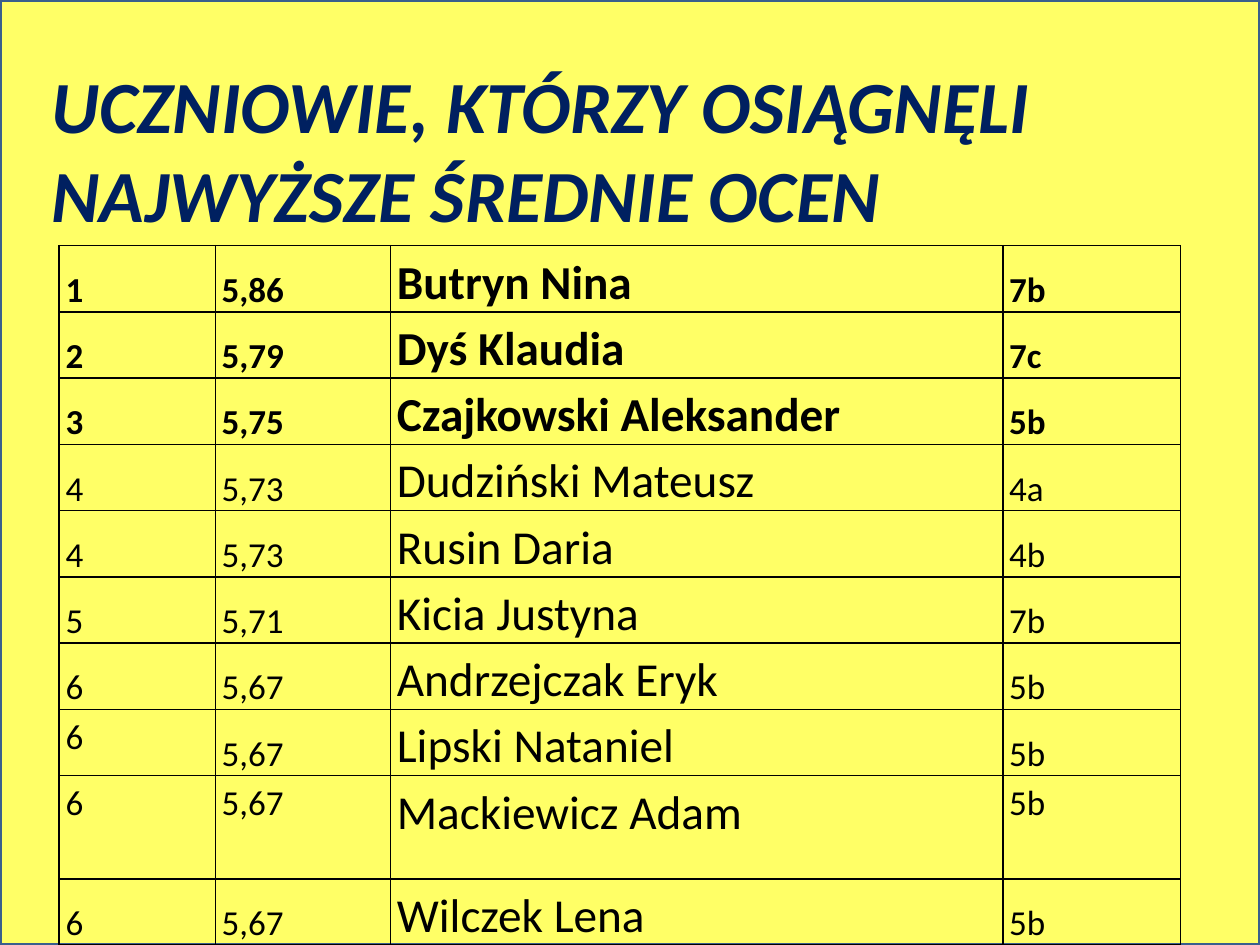
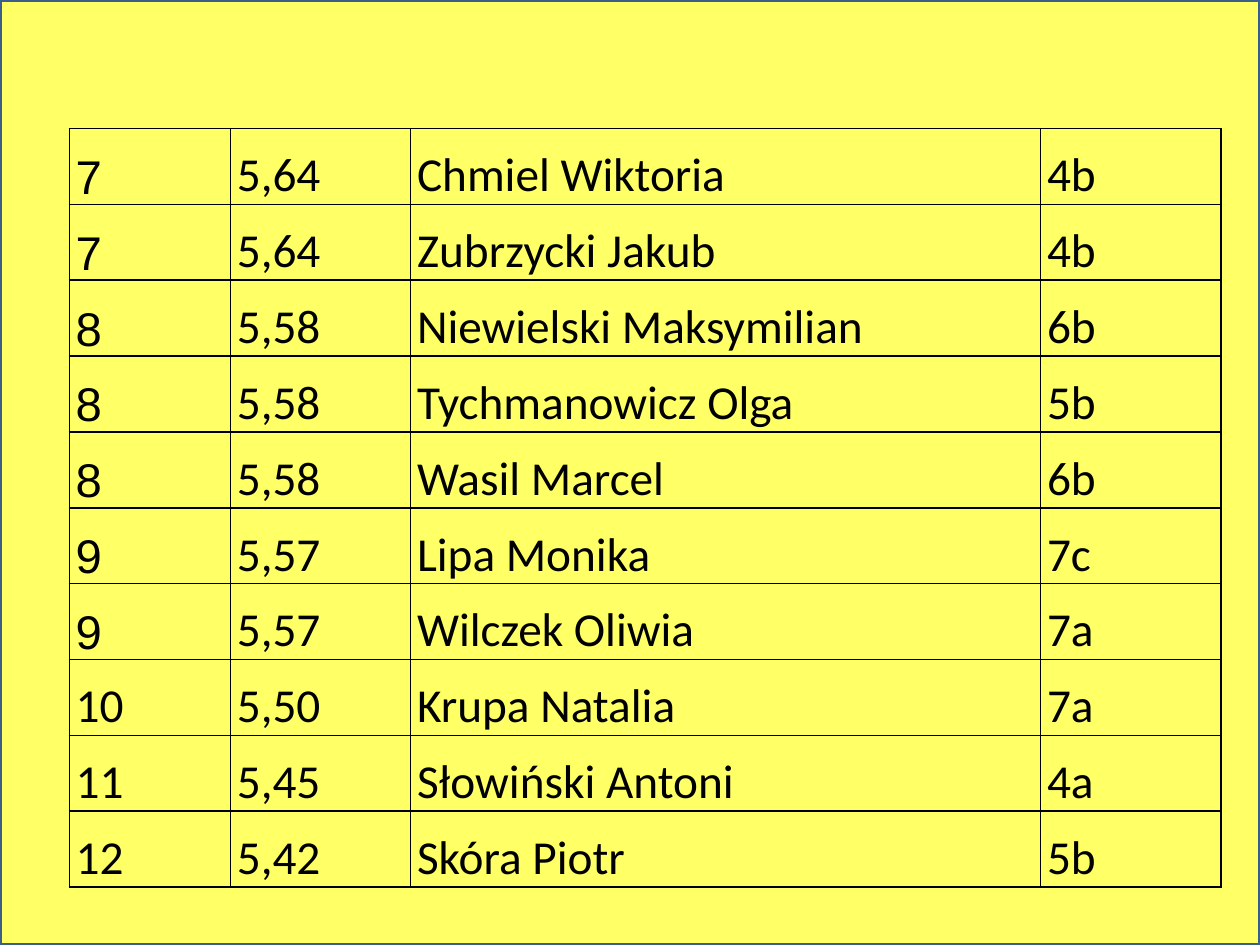
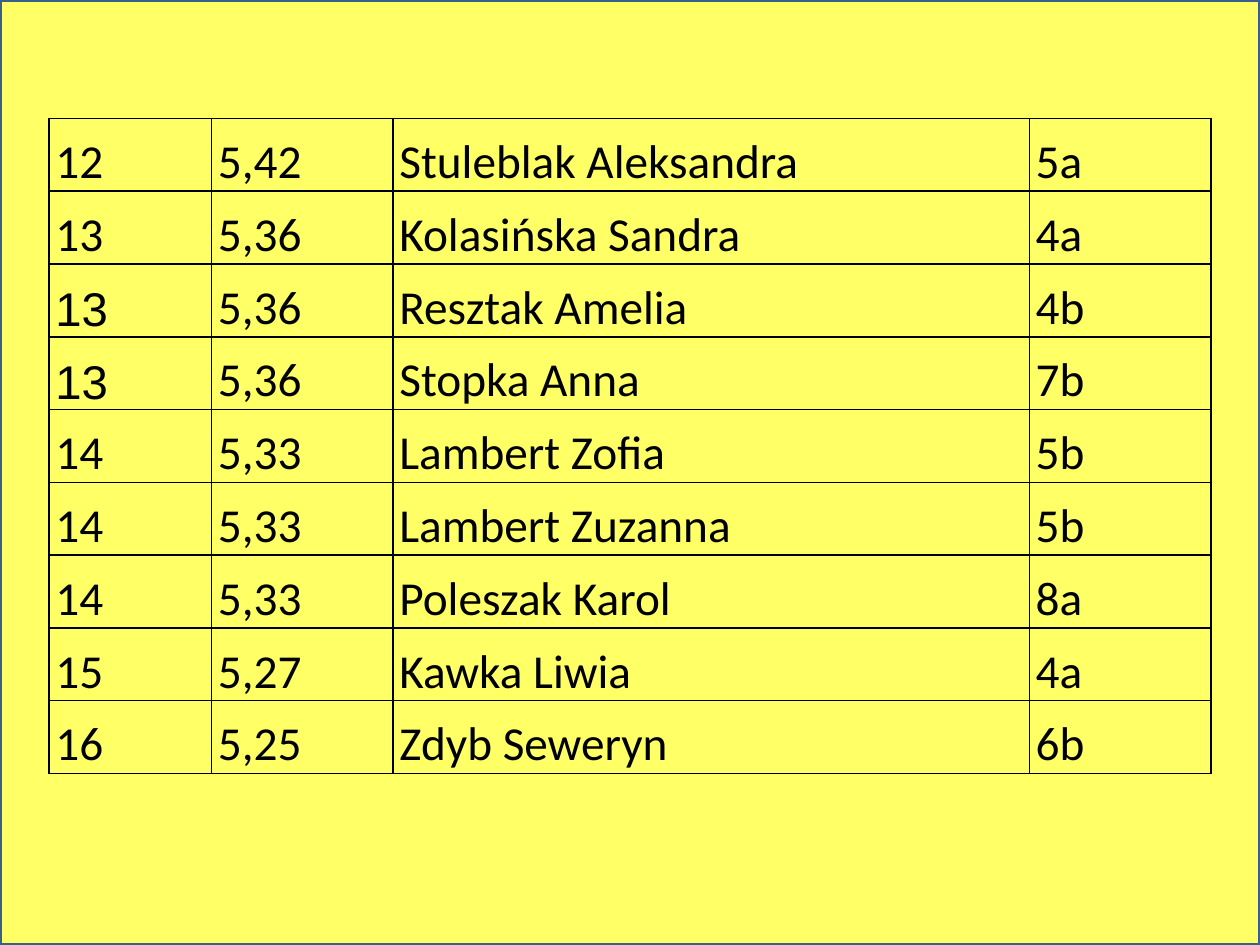
from lxml import etree
from pptx import Presentation
from pptx.dml.color import RGBColor
from pptx.enum.shapes import MSO_SHAPE
from pptx.enum.text import MSO_ANCHOR, MSO_AUTO_SIZE, PP_ALIGN
from pptx.oxml.ns import qn
from pptx.util import Inches, Pt

RECTANGLE = MSO_SHAPE.RECTANGLE
TOP, MIDDLE, BOTTOM = MSO_ANCHOR.TOP, MSO_ANCHOR.MIDDLE, MSO_ANCHOR.BOTTOM
LEFT = PP_ALIGN.LEFT
NO_AUTOFIT = MSO_AUTO_SIZE.NONE

YELLOW = RGBColor(0xFF, 0xFF, 0x66)
FRAME_BLUE = RGBColor(0x3A, 0x5F, 0x8C)
NAVY = RGBColor(0x00, 0x20, 0x60)
BLACK = RGBColor(0x00, 0x00, 0x00)

SLIDE_SIZE = (10, 7.5)
TITLE_ONLY, BLANK = 5, 6
NAME_COLUMN = 2
BODY_FONT, RANK_FONT = "Calibri", "Arial"
LINE_SPACING = 1.15
CELL_INSETS = {
    "margin_left": Inches(0.05), "margin_right": Inches(0.05),
    "margin_top": 0, "margin_bottom": 0,
}

# Rank, average, pupil, class
TOP_PUPILS = [
    ("1", "5,86", "Butryn Nina", "7b"),
    ("2", "5,79", "Dyś Klaudia", "7c"),
    ("3", "5,75", "Czajkowski Aleksander", "5b"),
    ("4", "5,73", "Dudziński Mateusz", "4a"),
    ("4", "5,73", "Rusin Daria", "4b"),
    ("5", "5,71", "Kicia Justyna", "7b"),
    ("6", "5,67", "Andrzejczak Eryk", "5b"),
    ("6", "5,67", "Lipski Nataniel", "5b"),
    ("6", "5,67", "Mackiewicz Adam", "5b"),
    ("6", "5,67", "Wilczek Lena", "5b"),
]
MIDDLE_PUPILS = [
    ("7", "5,64", "Chmiel Wiktoria", "4b"),
    ("7", "5,64", "Zubrzycki Jakub", "4b"),
    ("8", "5,58", "Niewielski Maksymilian", "6b"),
    ("8", "5,58", "Tychmanowicz Olga", "5b"),
    ("8", "5,58", "Wasil Marcel", "6b"),
    ("9", "5,57", "Lipa Monika", "7c"),
    ("9", "5,57", "Wilczek Oliwia", "7a"),
    ("10", "5,50", "Krupa Natalia", "7a"),
    ("11", "5,45", "Słowiński Antoni", "4a"),
    ("12", "5,42", "Skóra Piotr", "5b"),
]
LAST_PUPILS = [
    ("12", "5,42", "Stuleblak Aleksandra", "5a"),
    ("13", "5,36", "Kolasińska Sandra", "4a"),
    ("13", "5,36", "Resztak Amelia", "4b"),
    ("13", "5,36", "Stopka Anna", "7b"),
    ("14", "5,33", "Lambert Zofia", "5b"),
    ("14", "5,33", "Lambert Zuzanna", "5b"),
    ("14", "5,33", "Poleszak Karol", "8a"),
    ("15", "5,27", "Kawka Liwia", "4a"),
    ("16", "5,25", "Zdyb Seweryn", "6b"),
]


def apply(target, formats):
    for name, value in formats.items():
        setattr(target, name, value)


def write(frame, text, color, **formats):
    """Put one formatted run in the first paragraph and return the paragraph."""
    para = frame.paragraphs[0]
    span = para.add_run()
    span.text = text
    apply(span.font, formats)
    span.font.color.rgb = color
    return para


def draw_borders(cell, color=BLACK, width=Pt(1)):
    properties = cell._tc.get_or_add_tcPr()
    for side in ("lnL", "lnR", "lnT", "lnB"):
        line = etree.SubElement(properties, qn(f"a:{side}"), w=str(width))
        fill = etree.SubElement(line, qn("a:solidFill"))
        etree.SubElement(fill, qn("a:srgbClr"), val=str(color))


# Yellow framed backdrop shared by all slides
def add_page(deck, layout):
    page = deck.slides.add_slide(deck.slide_layouts[layout])
    backdrop = page.shapes.add_shape(RECTANGLE, 0, 0, *map(Inches, SLIDE_SIZE))
    backdrop.shadow.inherit = False
    backdrop.fill.solid()
    backdrop.fill.fore_color.rgb = YELLOW
    backdrop.line.color.rgb = FRAME_BLUE
    backdrop.line.width = Pt(2)
    return page


def add_title(page, box, text):
    title = page.shapes.title
    title.element.getparent().append(title.element)  # in front of the backdrop
    apply(title, dict(zip(("left", "top", "width", "height"), map(Inches, box))))
    frame = title.text_frame
    apply(frame, {"word_wrap": True, "auto_size": NO_AUTOFIT,
                  "vertical_anchor": MIDDLE})
    para = write(frame, text, NAVY, name=BODY_FONT, size=Pt(42), bold=True, italic=True)
    para.alignment = LEFT


# Ranking table: equal rows share the height left over by the tall ones
def add_ranking(page, box, columns, pupils, small=27, bold_rows=(),
                tall_rows=None, top_cells=(), arial_rows=()):
    tall_rows = tall_rows or {}
    row_height = (box[3] - sum(tall_rows.values())) / (len(pupils) - len(tall_rows))
    table = page.shapes.add_table(
        len(pupils), len(columns), *map(Inches, box)).table
    apply(table, {"first_row": False, "horz_banding": False})
    for column, width in zip(table.columns, columns):
        column.width = Inches(width)
    for r, pupil in enumerate(pupils):
        table.rows[r].height = Inches(tall_rows.get(r, row_height))
        for c, text in enumerate(pupil):
            cell = table.cell(r, c)
            draw_borders(cell)
            cell.fill.background()
            apply(cell, CELL_INSETS)
            cell.vertical_anchor = TOP if (r, c) in top_cells else BOTTOM
            arial = c == 0 and r in arial_rows
            para = write(cell.text_frame, text, BLACK,
                         name=RANK_FONT if arial else BODY_FONT,
                         size=Pt(27 if c == NAME_COLUMN else small),
                         bold=r in bold_rows)
            if not arial:
                para.line_spacing = LINE_SPACING


def main():
    deck = Presentation()
    deck.slide_width, deck.slide_height = map(Inches, SLIDE_SIZE)

    # Best averages
    page = add_page(deck, TITLE_ONLY)
    add_title(page, (0.31, 0.39, 9.69, 1.58),
              "UCZNIOWIE, KTÓRZY OSIĄGNĘLI NAJWYŻSZE ŚREDNIE OCEN")
    add_ranking(page, (0.47, 1.95, 8.9, 5.47), (1.24, 1.39, 4.86, 1.41), TOP_PUPILS,
                small=20, bold_rows=range(3), tall_rows={8: 0.82},
                top_cells={(7, 0), (8, 0), (8, 1), (8, 2), (8, 3)})

    # Ranks 7 to 12
    page = add_page(deck, BLANK)
    add_ranking(page, (0.55, 1.02, 9.14, 6.02), (1.28, 1.43, 5, 1.43),
                MIDDLE_PUPILS, arial_rows=range(7))

    # Ranks 12 to 16
    page = add_page(deck, BLANK)
    add_ranking(page, (0.39, 0.94, 9.22, 5.2), (1.29, 1.44, 5.05, 1.44),
                LAST_PUPILS, arial_rows=(2, 3))

    deck.save("out.pptx")


if __name__ == "__main__":
    main()
